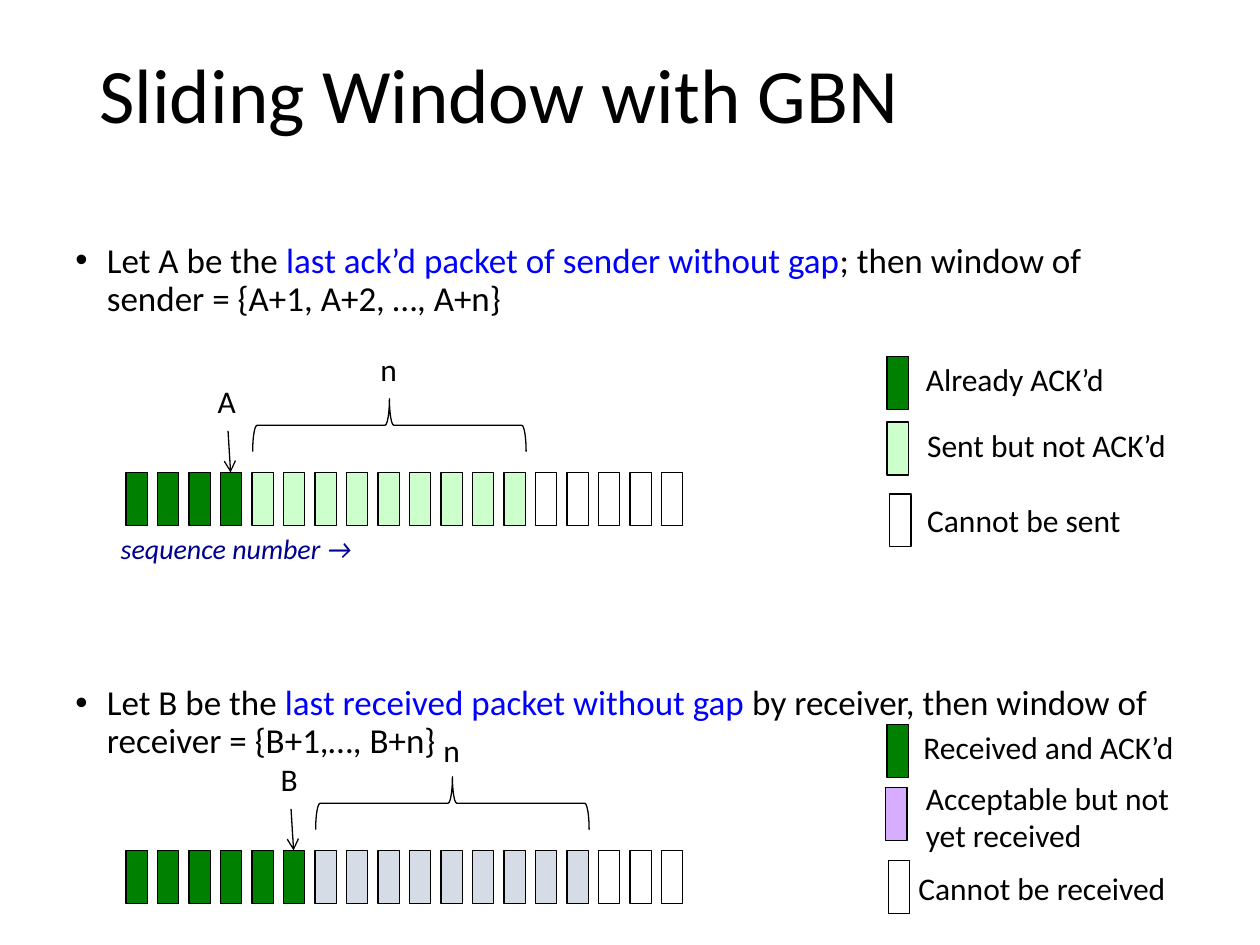
from dataclasses import dataclass

from lxml.etree import SubElement
from pptx import Presentation
from pptx.dml.color import RGBColor
from pptx.enum.shapes import MSO_CONNECTOR, MSO_SHAPE
from pptx.oxml.ns import qn
from pptx.util import Inches, Pt

BLACK, WHITE, GREEN, BLUE, NAVY = "000000", "FFFFFF", "008000", "0000FF", "000090"
MINT, GREY, LILAC = "CCFFCC", "D6DCE5", "D6ADFF"
PACKET_WIDTH, PACKET_HEIGHT, PACKET_STEP = 0.17, 0.42, 0.25
ROW_LEFT, PACKET_COUNT, WINDOW_SIZE = 1.0, 18, 9


@dataclass
class PacketRow:
    top: float
    done: int
    window_fill: str
    marker: str
    size_label_top: float


@dataclass
class LegendEntry:
    left: float
    top: float
    fill: str
    label: str
    label_box: tuple[float, float, float, float]


@dataclass
class Bullet:
    top: float
    wording: list[tuple[str, str]]


ROWS = [
    PacketRow(3.75, 4, MINT, "A", 2.73),
    PacketRow(6.75, 6, GREY, "B", 5.75),
]
LEGEND = [
    LegendEntry(7.04, 2.83, GREEN, "Already ACK’d", (7.25, 2.81, 1.84, 0.4)),
    LegendEntry(7.04, 3.35, MINT, "Sent but not ACK’d", (7.26, 3.33, 2.34, 0.4)),
    LegendEntry(7.06, 3.92, WHITE, "Cannot be sent", (7.26, 3.93, 1.91, 0.4)),
    LegendEntry(7.04, 5.75, GREEN, "Received and ACK’d", (7.23, 5.73, 2.52, 0.4)),
    LegendEntry(7.03, 6.25, LILAC, "Acceptable but not\nyet received",
                (7.25, 6.13, 2.31, 0.71)),
    LegendEntry(7.05, 6.83, WHITE, "Cannot be received", (7.19, 6.85, 2.39, 0.4)),
]
BULLETS = [
    Bullet(1.88, [("Let A be the ", BLACK),
                  ("last ack’d packet of sender without gap", BLUE),
                  ("; then window of sender = {A+1, A+2, …, A+n}", BLACK)]),
    Bullet(5.39, [("Let B be the ", BLACK),
                  ("last received packet without gap", BLUE),
                  (" by receiver, then window of receiver = {B+1,…, B+n}", BLACK)]),
]


def colour(hex_text: str) -> RGBColor:
    return RGBColor.from_string(hex_text)


def add_text(page, left: float, top: float, width: float, height: float,
             wording: list[tuple[str, str]], size: float = 18,
             wrap: bool = False, italic: bool = False):
    """Add a one-paragraph text box of coloured spans; return the paragraph."""
    box = page.shapes.add_textbox(Inches(left), Inches(top), Inches(width), Inches(height))
    box.text_frame.word_wrap = wrap
    para = box.text_frame.paragraphs[0]
    font_format = {"name": "Calibri", "size": Pt(size), "italic": italic}
    for text, hex_text in wording:
        for line_index, line in enumerate(text.split("\n")):
            if line_index:
                para.add_line_break()
            span = para.add_run()
            span.text = line
            for name, value in font_format.items():
                setattr(span.font, name, value)
            span.font.color.rgb = colour(hex_text)
    return para


def add_bullet(page, bullet: Bullet) -> None:
    para = add_text(page, 0.5, bullet.top, 9, 0.75, bullet.wording, 20, wrap=True)
    para.line_spacing = 0.9
    properties = para._p.get_or_add_pPr()
    for name, value in {"marL": Inches(0.25), "indent": -Inches(0.25)}.items():
        properties.set(name, str(int(value)))
    SubElement(properties, qn("a:buFont")).set("typeface", "Arial")
    SubElement(properties, qn("a:buChar")).set("char", "•")


def style_line(line) -> None:
    line.color.rgb = colour(BLACK)
    line.width = Pt(0.75)


def add_packet(page, left: float, top: float, fill: str) -> None:
    packet = page.shapes.add_shape(MSO_SHAPE.RECTANGLE, Inches(left), Inches(top),
                                   Inches(PACKET_WIDTH), Inches(PACKET_HEIGHT))
    packet.shadow.inherit = False
    packet.fill.solid()
    packet.fill.fore_color.rgb = colour(fill)
    style_line(packet.line)


def add_brace(page, left: float, top: float) -> None:
    brace = page.shapes.add_shape(MSO_SHAPE.LEFT_BRACE, Inches(left), Inches(top),
                                  Inches(0.42), Inches(2.17))
    brace.rotation = 90
    brace.shadow.inherit = False
    brace.fill.background()
    style_line(brace.line)


def add_arrow(page, start: tuple[float, float], end: tuple[float, float]) -> None:
    arrow = page.shapes.add_connector(MSO_CONNECTOR.STRAIGHT,
                                      *(Inches(value) for value in start + end))
    style_line(arrow.line)
    SubElement(arrow.line._get_or_add_ln(), qn("a:tailEnd")).set("type", "arrow")
    SubElement(arrow._element.spPr, qn("a:effectLst"))


def add_row(page, row: PacketRow) -> None:
    """Draw the packets, the marker of the last done one and the window brace."""
    for index in range(PACKET_COUNT):
        if index < row.done:
            fill = GREEN
        elif index < row.done + WINDOW_SIZE:
            fill = row.window_fill
        else:
            fill = WHITE
        add_packet(page, ROW_LEFT + index * PACKET_STEP, row.top, fill)

    last = ROW_LEFT + (row.done - 1) * PACKET_STEP
    add_brace(page, last + 1.13, row.top - 1.46)
    add_text(page, last + 1.17, row.size_label_top, 0.37, 0.44, [("n", BLACK)])
    add_text(page, last - 0.12, row.top - 0.77, 0.37, 0.44, [(row.marker, BLACK)])
    add_arrow(page, (last + 0.06, row.top - 0.33), (last + 0.08, row.top))


def main() -> None:
    deck = Presentation()
    deck.slide_width, deck.slide_height = Inches(10), Inches(7.5)
    page = deck.slides.add_slide(deck.slide_layouts[6])

    # Title and statements
    title = add_text(page, 0.69, 0.4, 8.62, 1.45,
                     [("Sliding Window with GBN", BLACK)], 44, wrap=True)
    title.line_spacing = 0.9
    for bullet in BULLETS:
        add_bullet(page, bullet)

    # Sender and receiver windows
    for row in ROWS:
        add_row(page, row)
    add_text(page, 0.86, 4.17, 2.89, 0.37, [("sequence number →", NAVY)], 16,
             wrap=True, italic=True)

    # Legends
    for entry in LEGEND:
        add_packet(page, entry.left, entry.top, entry.fill)
        add_text(page, *entry.label_box, [(entry.label, BLACK)])

    deck.save("out.pptx")


if __name__ == "__main__":
    main()
